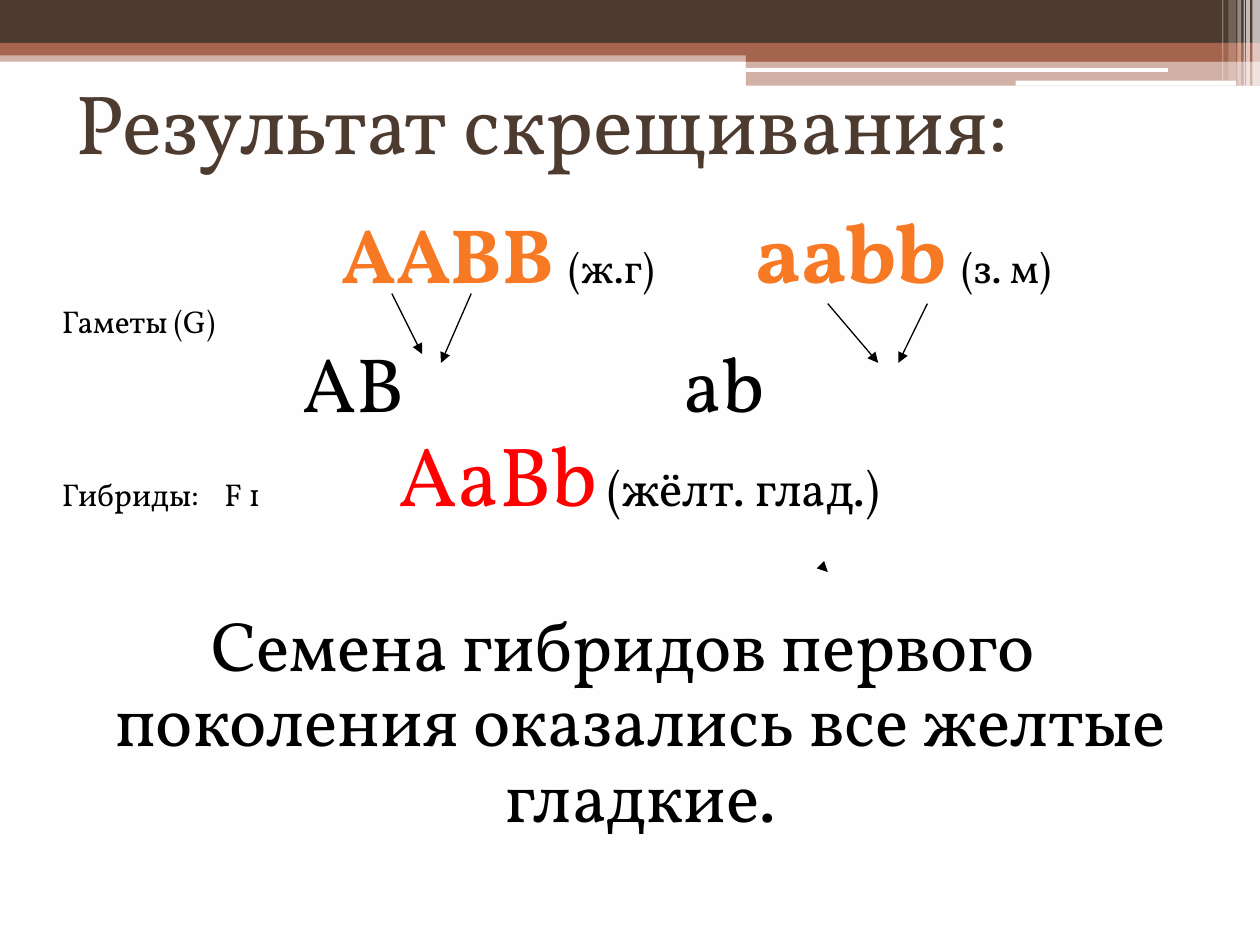
from lxml import etree
from pptx import Presentation
from pptx.dml.color import RGBColor
from pptx.enum.shapes import MSO_CONNECTOR, MSO_SHAPE
from pptx.enum.text import MSO_ANCHOR, MSO_AUTO_SIZE, PP_ALIGN
from pptx.oxml import parse_xml
from pptx.oxml.ns import nsdecls, qn
from pptx.util import Inches, Pt

RECTANGLE = MSO_SHAPE.RECTANGLE
ROUNDED = MSO_SHAPE.ROUNDED_RECTANGLE
STRAIGHT = MSO_CONNECTOR.STRAIGHT
LEFT, CENTER = PP_ALIGN.LEFT, PP_ALIGN.CENTER
TOP, MIDDLE = MSO_ANCHOR.TOP, MSO_ANCHOR.MIDDLE
NO_AUTOFIT = MSO_AUTO_SIZE.NONE

FONT = "Vollkorn"
COLORS = {
    "paper": "FFFEFF", "white": "FFFFFF", "brown": "4E3B30",
    "rust": "A5644E", "black": "000000", "red": "FF0000",
}
GENOTYPE_GRADIENT = [(0, "743A00"), (78, "F87924"), (100, "FEF1EC")]


def color(name):
    """Return the named colour."""
    return RGBColor.from_string(COLORS[name])


def add_run(paragraph, text, size=24, fill="black", bold=False,
            gradient=None, spacing=0):
    """Append formatted text, with character spacing in points."""
    run = paragraph.add_run()
    run.text = text
    run.font.name, run.font.size, run.font.bold = FONT, Pt(size), bold
    properties = run._r.get_or_add_rPr()
    if spacing:
        properties.set("spc", str(spacing * 100))
    if gradient:
        stops = "".join(
            f'<a:gs pos="{position * 1000}"><a:srgbClr val="{value}"/></a:gs>'
            for position, value in gradient)
        properties.insert(0, parse_xml(
            f'<a:gradFill {nsdecls("a")}><a:gsLst>{stops}</a:gsLst>'
            '<a:lin ang="5400000" scaled="0"/></a:gradFill>'))
    else:
        run.font.color.rgb = color(fill)


def format_paragraph(paragraph, align=LEFT, before=3, margin=0, indent=0):
    """Set spacing, margin and first-line indent, without a bullet."""
    paragraph.alignment = align
    paragraph.line_spacing = 0.9
    paragraph.space_before = Pt(before)
    properties = paragraph._p.get_or_add_pPr()
    properties.set("marL", str(Inches(margin)))
    properties.set("indent", str(Inches(indent)))
    etree.SubElement(properties, qn("a:buNone"))


def place(shape, box, anchor, left_inset=0.1):
    """Place a placeholder in its box, in front of earlier shapes."""
    shape.left, shape.top, shape.width, shape.height = map(Inches, box)
    frame = shape.text_frame
    frame.word_wrap, frame.auto_size = True, NO_AUTOFIT
    frame.vertical_anchor, frame.margin_left = anchor, Inches(left_inset)
    shape.element.getparent().append(shape.element)
    return frame


def add_bar(slide, box, fill, opacity=100, kind=RECTANGLE):
    """Add one borderless bar."""
    shape = slide.shapes.add_shape(kind, *map(Inches, box))
    shape.shadow.inherit = False
    shape.line.fill.background()
    shape.fill.solid()
    shape.fill.fore_color.rgb = color(fill)
    if opacity < 100:
        value = shape.element.spPr.find(qn("a:solidFill"))[0]
        etree.SubElement(value, qn("a:alpha"), val=str(opacity * 1000))


def add_header(slide, box):
    """Draw the bands, steps and thin stripes along the top."""
    left, top, width, height = box
    step = left + 5.92
    step_width = left + width - step
    add_bar(slide, (left, top + 0.4, width, 0.09), "rust", 50)
    add_bar(slide, (left, top, width, 0.34), "brown")
    add_bar(slide, (left, top + 0.34, width, 0.1), "rust")
    add_bar(slide, (step, top + 0.39, step_width, 0.1), "rust")
    add_bar(slide, (step, top + 0.48, step_width, 0.2), "rust", 50)
    add_bar(slide, (step, top + 0.54, 3.35, 0.03), "paper", kind=ROUNDED)
    add_bar(slide, (left + 8.06, top + 0.64, 1.75, 0.04), "paper", kind=ROUNDED)
    stripes = [(9.94, 0.06, height, 65), (9.89, 0.03, height, 65),
               (9.87, 0.01, height, 60), (9.82, 0.03, height, 40),
               (9.75, 0.06, 0.64, 20), (9.7, 0.01, 0.64, 30)]
    for offset, stripe_width, stripe_height, opacity in stripes:
        add_bar(slide, (left + offset, top, stripe_width, stripe_height),
                "white", opacity)


def add_title(slide, box):
    """Fill the title placeholder."""
    paragraph = place(slide.shapes.title, box, MIDDLE).paragraphs[0]
    paragraph.alignment = LEFT
    add_run(paragraph, "Результат скрещивания:", size=48, fill="brown")


def gap(spacing):
    """Return one space widened by the given points."""
    return " ", {"size": 18, "spacing": spacing}


def add_cross(slide, box):
    """Write the crossing scheme and its conclusion in the body."""
    genotype = {"bold": True, "gradient": GENOTYPE_GRADIENT}
    space = (" ", {"size": 40})
    rows = [
        ({"margin": 2.22}, [
            ("AABB", {"size": 44, **genotype}), space, ("(ж.г)", {}), gap(54),
            ("aabb", {"size": 48, **genotype}), space, ("(з. м)", {})]),
        ({}, [("Гаметы (G)", {"size": 18})]),
        ({"margin": 1.91}, [
            ("AB", {"size": 44}), gap(156), ("ab", {"size": 44})]),
        ({}, [
            ("Гибриды:", {"size": 18}), gap(11), ("F 1", {"size": 18}), gap(75),
            ("AaBb", {"size": 48, "fill": "red"}),
            (" (жёлт. глад.)", {"size": 28})]),
        ({"align": CENTER, "before": 49, "margin": 0.28, "indent": -0.28}, [
            ("Семена гибридов первого поколения оказались все желтые гладкие.",
             {"size": 40})]),
    ]
    frame = place(slide.placeholders[1], box, TOP, left_inset=0.22)
    for index, (layout, runs) in enumerate(rows):
        paragraph = frame.add_paragraph() if index else frame.paragraphs[0]
        format_paragraph(paragraph, **layout)
        for text, style in runs:
            add_run(paragraph, text, **style)


def add_arrow(slide, start, end):
    """Draw a thin black arrow."""
    arrow = slide.shapes.add_connector(STRAIGHT, *map(Inches, start + end))
    arrow.line.color.rgb = color("black")
    arrow.line.width = Pt(0.75)
    line = arrow.element.spPr.find(qn("a:ln"))
    etree.SubElement(line, qn("a:tailEnd"), type="triangle")
    etree.SubElement(arrow.element.spPr, qn("a:effectLst"))


def main():
    """Build and save the slide."""
    presentation = Presentation()
    presentation.slide_width, presentation.slide_height = Inches(10), Inches(7.5)
    slide = presentation.slides.add_slide(presentation.slide_layouts[1])
    slide.background.fill.solid()
    slide.background.fill.fore_color.rgb = color("paper")
    add_header(slide, (0, 0, 10, 0.68))
    add_title(slide, (0.5, 0.21, 9, 1.5))
    add_cross(slide, (0.27, 1.62, 9.23, 5.51))
    arrows = [((6.57, 2.41), (6.97, 2.88)), ((7.36, 2.41), (7.13, 2.88)),
              ((3.11, 2.33), (3.35, 2.81)), ((3.74, 2.33), (3.5, 2.88)),
              ((6.56, 4.53), (6.57, 4.54))]
    for start, end in arrows:
        add_arrow(slide, start, end)
    presentation.save("out.pptx")


if __name__ == "__main__":
    main()
